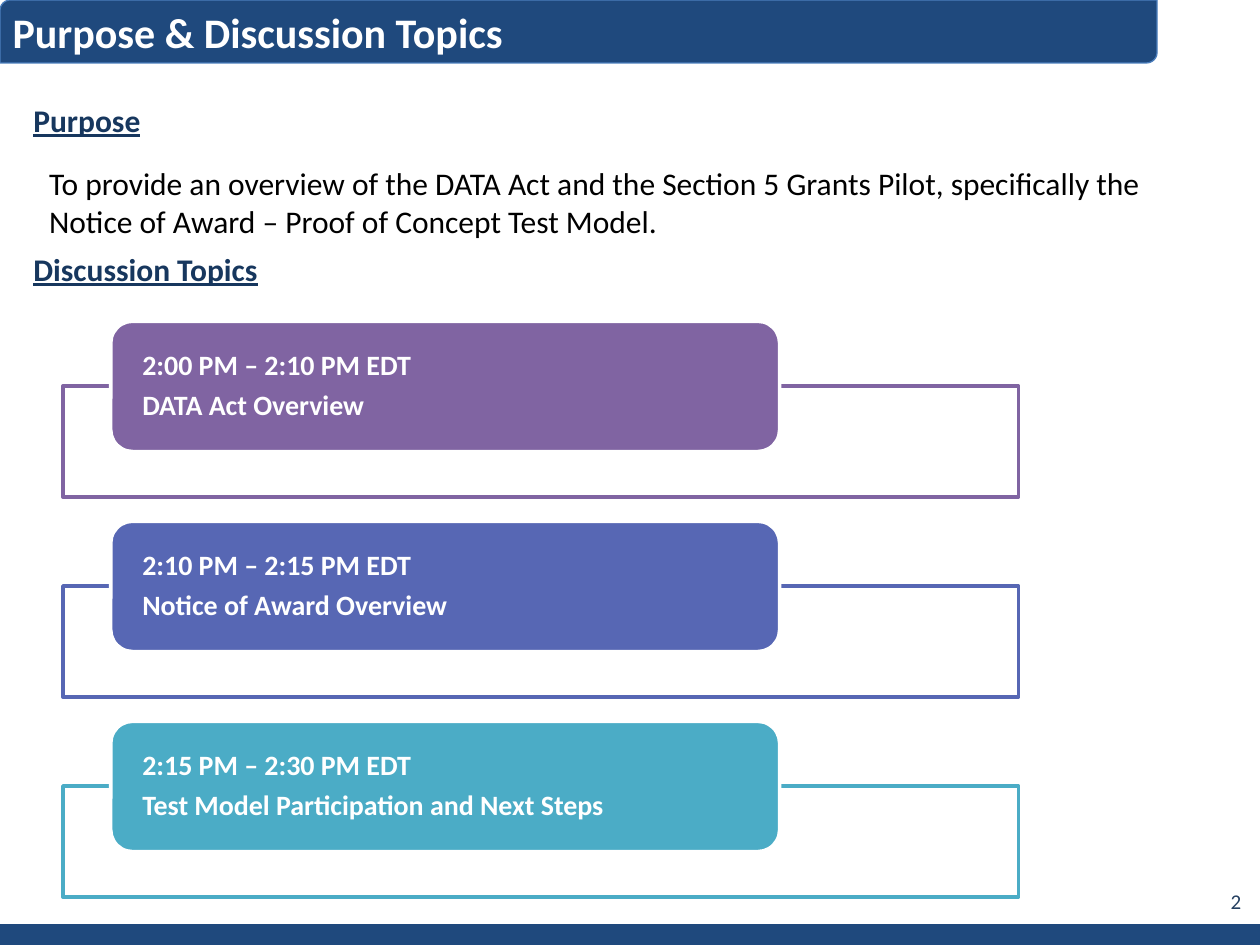
from lxml.etree import SubElement
from pptx import Presentation
from pptx.dml.color import RGBColor
from pptx.enum.shapes import MSO_SHAPE as Shape
from pptx.enum.text import MSO_ANCHOR as Anchor, MSO_AUTO_SIZE as AutoSize, PP_ALIGN as Align
from pptx.oxml.ns import qn
from pptx.util import Inches, Pt

NAVY = RGBColor(0x1F, 0x49, 0x7D)
BANNER_EDGE = RGBColor(0x4B, 0x7E, 0xBC)
HEADING = RGBColor(0x17, 0x37, 0x5E)
PAGE_NUMBER = RGBColor(0x25, 0x40, 0x61)
PURPLE = RGBColor(0x80, 0x64, 0xA2)
INDIGO = RGBColor(0x57, 0x67, 0xB4)
TEAL = RGBColor(0x4B, 0xAC, 0xC6)
WHITE = RGBColor(0xFF, 0xFF, 0xFF)
BLACK = RGBColor(0, 0, 0)

TOPICS = [
    ("2:00 PM – 2:10 PM EDT", "DATA Act Overview", PURPLE),
    ("2:10 PM – 2:15 PM EDT", "Notice of Award Overview", INDIGO),
    ("2:15 PM – 2:30 PM EDT", "Test Model Participation and Next Steps", TEAL),
]
FIRST_ROW, ROW_STEP = 30.6, 19.05


class SlideBuilder:
    """Places elements on a grid of 120 columns by 90 rows."""
    FONT = "Calibri"
    COLS, ROWS = 120, 90

    def __init__(self, prs):
        self.s = prs.slides.add_slide(prs.slide_layouts[5])
        self.col = prs.slide_width / self.COLS
        self.row = prs.slide_height / self.ROWS

    def box(self, x, y, w, h):
        return (int(x * self.col), int(y * self.row),
                int(w * self.col), int(h * self.row))

    def fill_text(self, tf, text, size, color, bold=False, underline=None, align=Align.LEFT):
        tf.word_wrap = True
        tf.text = text
        for p in tf.paragraphs:
            p.alignment = align
            for r in p.runs:
                font = r.font
                font.name, font.size, font.bold = self.FONT, Pt(size), bold
                font.underline = underline
                font.color.rgb = color

    def title(self, text, *at):
        sp = self.s.shapes.title
        sp.left, sp.top, sp.width, sp.height = self.box(*at)
        tf = sp.text_frame
        self.fill_text(tf, text, 24, WHITE, bold=True)
        tf.vertical_anchor = Anchor.TOP
        tf.auto_size = AutoSize.NONE
        # Bring the title in front of the banner
        sp.element.getparent().append(sp.element)

    def text(self, text, *at, anchor=Anchor.TOP, size=18, color=BLACK, **style):
        tf = self.s.shapes.add_textbox(*self.box(*at)).text_frame
        self.fill_text(tf, text, size, color, **style)
        tf.vertical_anchor = anchor

    def heading(self, text, *at):
        self.text(text, *at, color=HEADING, bold=True, underline=True)

    def shape(self, kind, *at, fill, line=None, width=2):
        sp = self.s.shapes.add_shape(kind, *self.box(*at))
        sp.shadow.inherit = False
        sp.fill.solid()
        sp.fill.fore_color.rgb = fill
        if line is None:
            sp.line.fill.background()
        else:
            sp.line.color.rgb = line
            sp.line.width = Pt(width)
        return sp

    def topic(self, time, name, color, y):
        # Outlined frame with a slightly transparent fill
        frame = self.shape(Shape.RECTANGLE, 6, y + 6.15, 91, 10.58, fill=WHITE, line=color)
        rgb = frame.element.spPr.find(qn("a:solidFill")).find(qn("a:srgbClr"))
        SubElement(rgb, qn("a:alpha"), val="90000")
        # Label card overlapping the frame
        card = self.shape(Shape.ROUNDED_RECTANGLE, 10.55, y, 63.7, 12.4, fill=color, line=WHITE)
        tf = card.text_frame
        self.fill_text(tf, f"{time}\n{name}", 16, WHITE, bold=True)
        tf.vertical_anchor = Anchor.MIDDLE
        tf.margin_left = tf.margin_right = Inches(0.2)
        tf.margin_top = tf.margin_bottom = 0
        for p in tf.paragraphs:
            p.line_spacing = 0.9
            p.space_after = Pt(5.6)


def main():
    prs = Presentation()
    prs.slide_width, prs.slide_height = Inches(10), Inches(7.5)
    b = SlideBuilder(prs)

    # Footer bar, banner and page number
    b.shape(Shape.RECTANGLE, 0, 88, 120, 2, fill=NAVY)
    b.shape(Shape.ROUND_2_DIAG_RECTANGLE, 0, 0, 110.2, 6, fill=NAVY, line=BANNER_EDGE, width=0.75)
    b.title("Purpose & Discussion Topics", 0, 0, 95, 6)
    b.text("2", 91.4, 83.4, 28, 4.8, anchor=Anchor.MIDDLE, size=12,
           color=PAGE_NUMBER, align=Align.RIGHT)

    # Purpose
    b.heading("Purpose", 2, 9, 70, 4.8)
    b.text("To provide an overview of the DATA Act and the Section 5 Grants Pilot, "
           "specifically the Notice of Award – Proof of Concept Test Model.",
           3.5, 15, 113, 8.5)

    # Discussion topics
    b.heading("Discussion Topics", 2, 23.2, 70, 4.8)
    for i, (time, name, color) in enumerate(TOPICS):
        b.topic(time, name, color, FIRST_ROW + i * ROW_STEP)

    prs.save("out.pptx")


if __name__ == "__main__":
    main()
